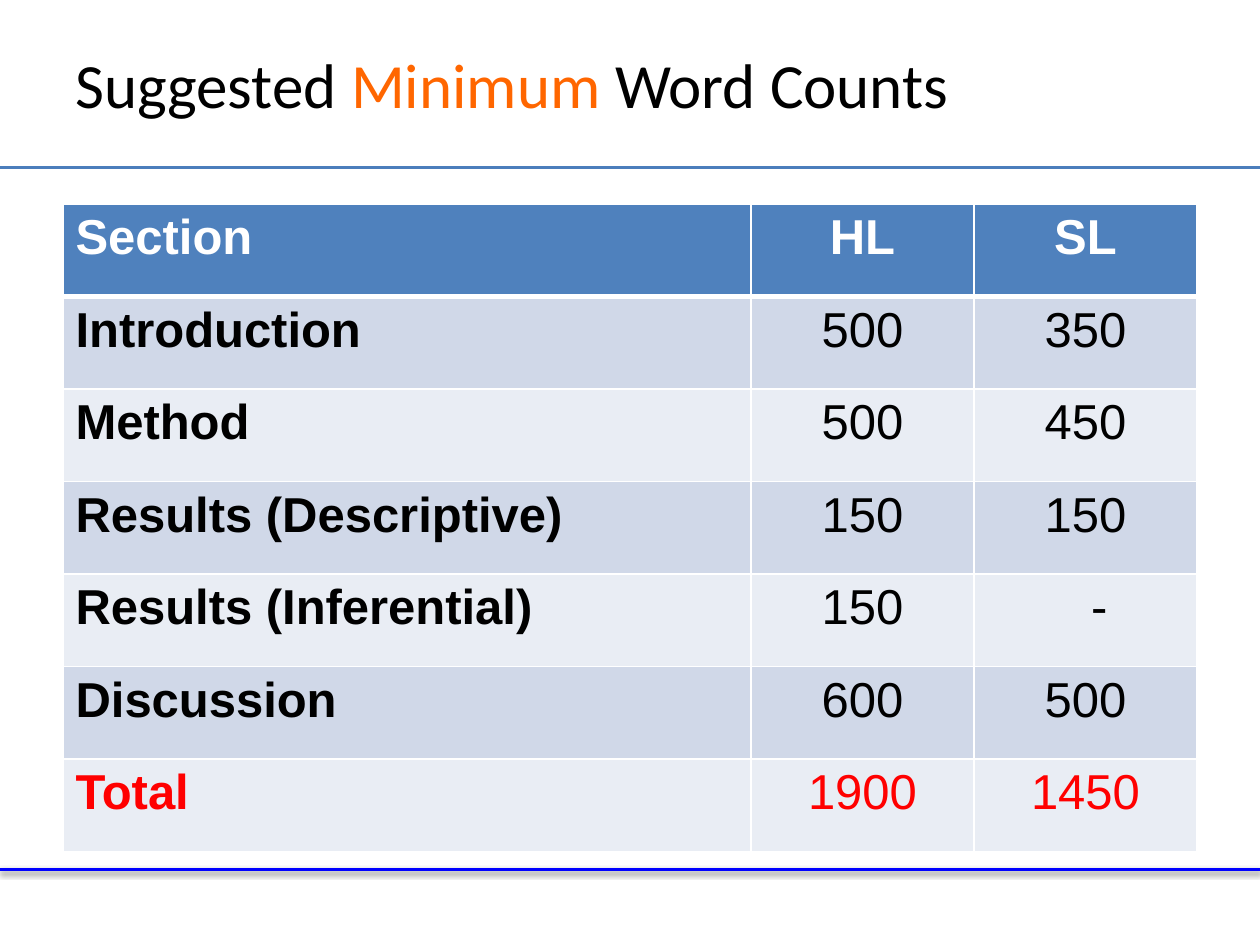
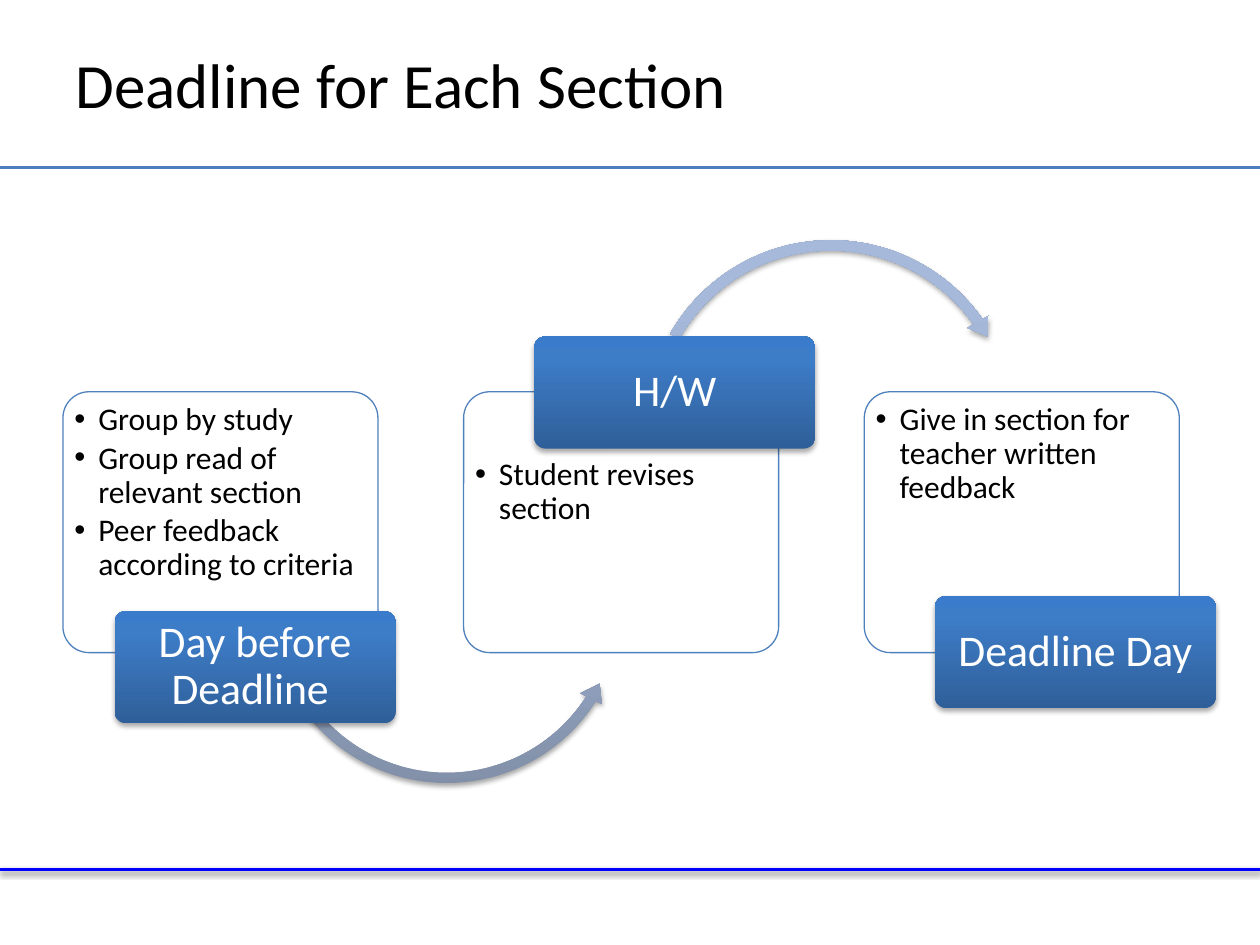
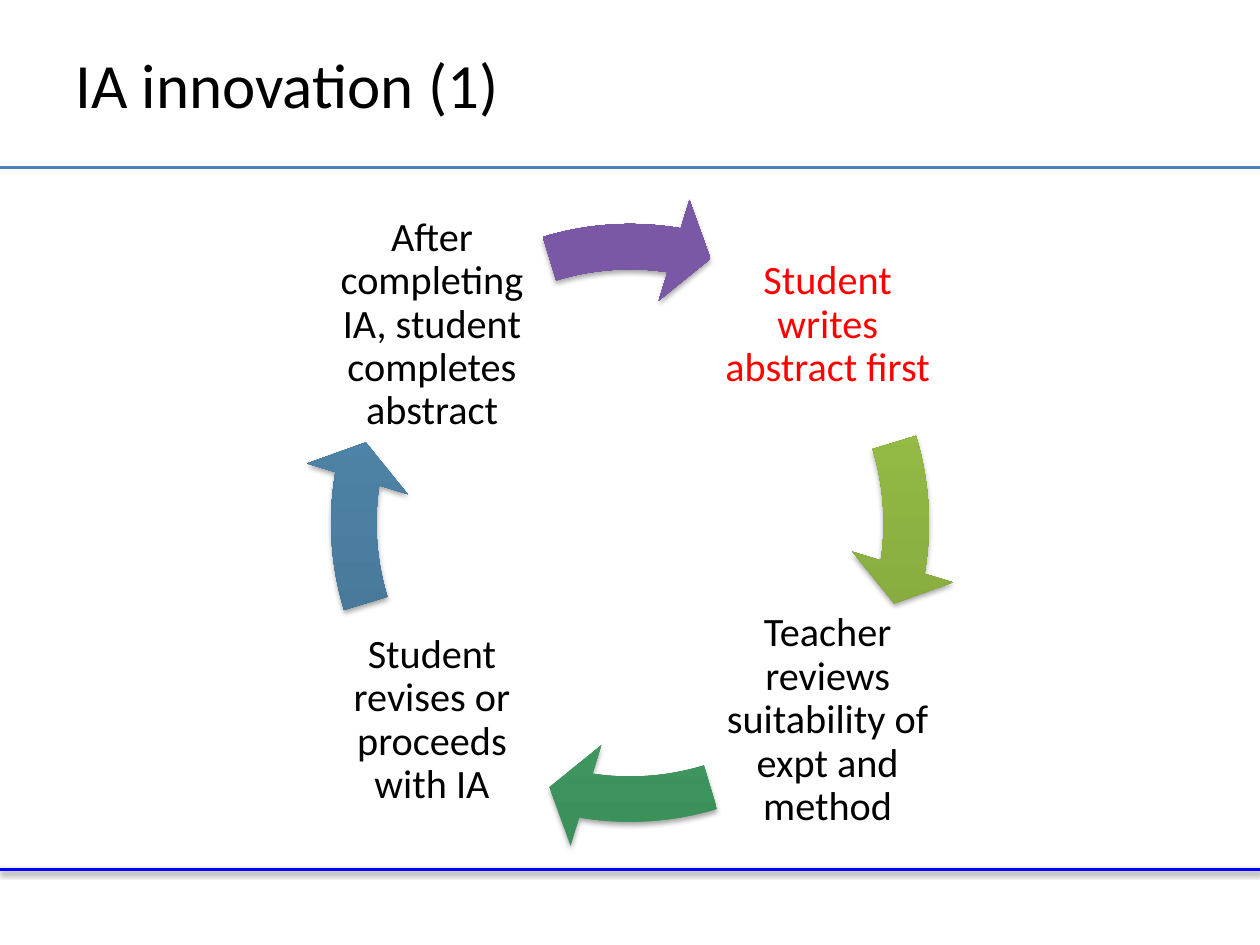
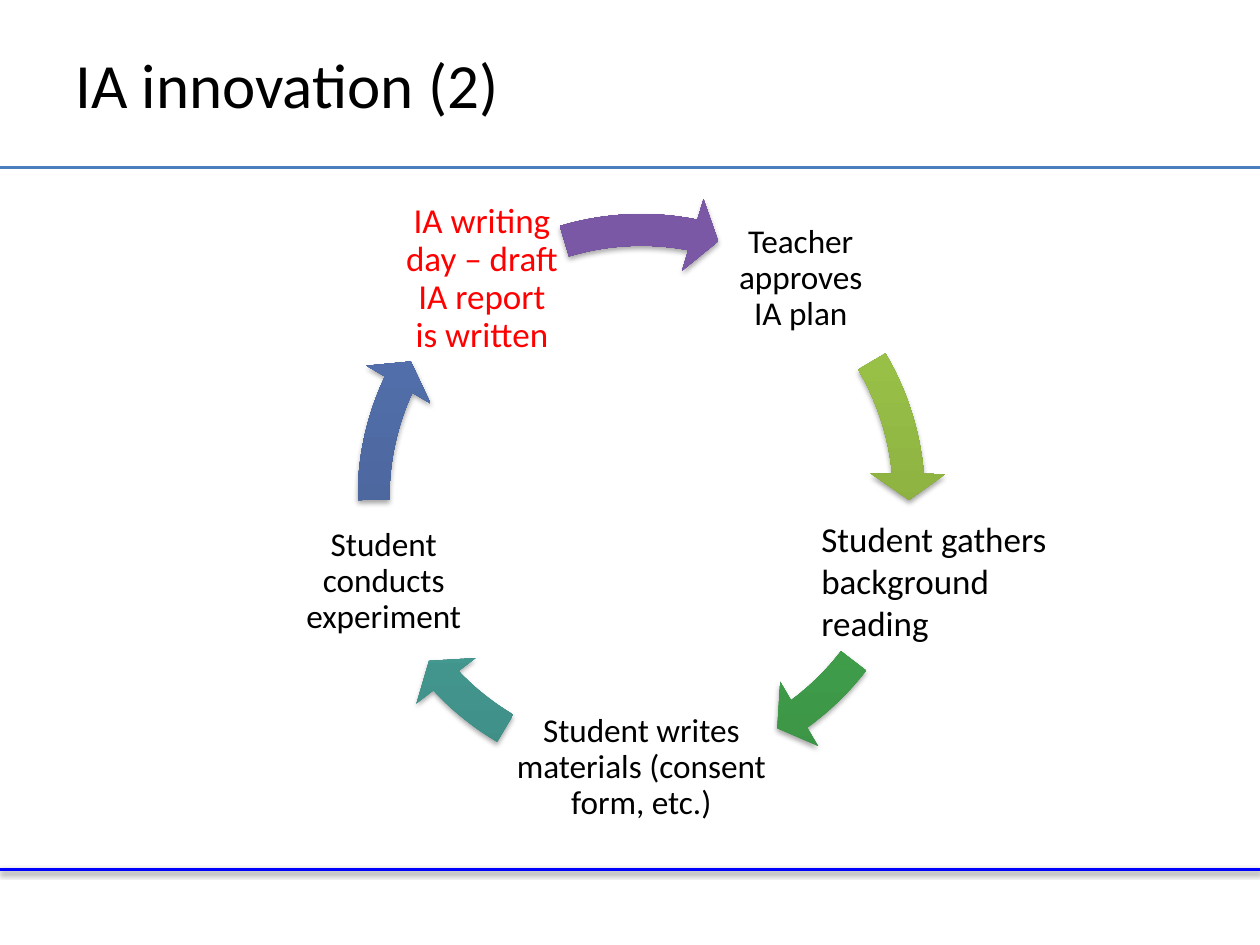
from copy import deepcopy

from lxml import etree
from pptx import Presentation
from pptx.dml.color import RGBColor
from pptx.enum.shapes import MSO_CONNECTOR, MSO_SHAPE
from pptx.enum.text import MSO_ANCHOR, PP_ALIGN
from pptx.oxml.ns import qn
from pptx.util import Inches, Pt

COLORS = {
    "black": "000000", "white": "FFFFFF", "red": "FF0000", "orange": "FF6600",
    "title_rule": "4B7EBC", "footer_rule": "0000FF", "accent": "4F81BD",
    "odd_row": "D0D8E8", "even_row": "E9EDF4",
}
# Gradient stops from bottom to top
GRADIENTS = {
    "label": ("2F5F99", "3D7CC7", "3A7CCB"),
    "pale": ("818FA8", "A7B9DA", "A7BADC"),
    "lime": ("779737", "9BC348", "9DC746"),
    "sea": ("3B8F5A", "4DBA75", "4BBD75"),
    "steel": ("3F6A88", "528AB0", "518BB3"),
    "purple": ("5F4480", "7B58A6", "7C57A8"),
    "green": ("3A9144", "4CBC58", "4ABF57"),
    "teal": ("3D8B83", "50B5AA", "4EB8AC"),
    "blue": ("405786", "5471AE", "5271B0"),
}
STOPS = (0, 0.8, 1)
FONT = "Calibri"


def rgb(name):
    return RGBColor.from_string(COLORS[name])


def sub(parent, tag, **attrs):
    el = etree.SubElement(parent, qn(tag))
    for key, value in attrs.items():
        el.set(key, str(value))
    return el


def set_shadow(sp, alpha=35, dist=1.8):
    """Give the shape a soft shadow below; alpha 0 means none."""
    spPr = sp._element.spPr
    for old in spPr.findall(qn("a:effectLst")):
        spPr.remove(old)
    effects = sub(spPr, "a:effectLst")
    if alpha:
        outer = sub(effects, "a:outerShdw", blurRad=Pt(3.1), dist=Pt(dist),
                    dir=5400000, rotWithShape=0)
        color = sub(outer, "a:srgbClr", val=COLORS["black"])
        sub(color, "a:alpha", val=alpha * 1000)


def set_gradient(sp, name):
    fill = sp.fill
    fill.gradient()
    fill.gradient_angle = 90
    stops = sp._element.spPr.find(".//" + qn("a:gsLst"))
    stops.append(deepcopy(stops[-1]))
    for stop, pos, color in zip(fill.gradient_stops, STOPS, GRADIENTS[name]):
        stop.position = pos
        stop.color.rgb = RGBColor.from_string(color)


def add_run(p, text, size, color="black", font=FONT, bold=False):
    r = p.add_run()
    r.text = text
    for key, value in {"size": Pt(size), "name": font, "bold": bold}.items():
        setattr(r.font, key, value)
    r.font.color.rgb = rgb(color)


def set_frame(tf, insets, anchor=MSO_ANCHOR.MIDDLE):
    """Insets are left, top, right, bottom in inches."""
    tf.word_wrap = True
    tf.vertical_anchor = anchor
    for side, inset in zip(("left", "top", "right", "bottom"), insets):
        setattr(tf, "margin_" + side, Inches(inset))


def write_centred(tf, text, size, color="black"):
    p = tf.paragraphs[0]
    p.alignment = PP_ALIGN.CENTER
    p.line_spacing = 0.9
    add_run(p, text, size, color)


def write_bullets(tf, items, size):
    for i, item in enumerate(items):
        p = tf.paragraphs[0] if i == 0 else tf.add_paragraph()
        p.level = 1
        p.alignment = PP_ALIGN.LEFT
        p.line_spacing = 0.9
        p.space_after = Pt(2.7)
        pPr = p._p.get_or_add_pPr()
        pPr.set("marL", str(Inches(0.19)))
        pPr.set("indent", str(Inches(-0.19)))
        sub(pPr, "a:buFont", typeface="Arial")
        sub(pPr, "a:buChar", char="•")
        add_run(p, item, size)


def add_rule(slide, y, color, width):
    line = slide.shapes.add_connector(
        MSO_CONNECTOR.STRAIGHT, 0, Inches(y), Inches(10), Inches(y))
    line.line.color.rgb = rgb(color)
    line.line.width = Pt(width)
    return line


def add_box(slide, x, y, w, h):
    return slide.shapes.add_textbox(Inches(x), Inches(y), Inches(w), Inches(h))


def add_slide(prs, *title_runs):
    """Add a slide with its rules and a title made of (text, color) runs."""
    slide = prs.slides.add_slide(prs.slide_layouts[6])
    set_shadow(add_rule(slide, 6.9, "footer_rule", 2), alpha=38, dist=1.6)
    set_shadow(add_rule(slide, 1.33, "title_rule", 1.75), alpha=0)
    tf = add_box(slide, 0.5, 0.08, 9, 1.17).text_frame
    set_frame(tf, (0.1, 0.05, 0.1, 0.05))
    for text, color in title_runs:
        add_run(tf.paragraphs[0], text, 36, color)
    return slide


def add_round_rect(slide, x, y, w, h):
    sp = slide.shapes.add_shape(MSO_SHAPE.ROUNDED_RECTANGLE, Inches(x),
                                Inches(y), Inches(w), Inches(h))
    sp.adjustments[0] = 0.1
    return sp


def add_card(slide, x, items, top_inset):
    sp = add_round_rect(slide, x, 3.11, 2.5, 2.07)
    sp.fill.solid()
    sp.fill.fore_color.rgb = rgb("white")
    sub(sp._element.spPr.find(".//" + qn("a:srgbClr")), "a:alpha", val=90000)
    sp.line.color.rgb = rgb("accent")
    sp.line.width = Pt(0.75)
    set_shadow(sp, alpha=0)
    set_frame(sp.text_frame, (0.03, top_inset, 0.03, 0.03), MSO_ANCHOR.TOP)
    write_bullets(sp.text_frame, items, 18)


def add_label(slide, x, y, text):
    sp = add_round_rect(slide, x, y, 2.23, 0.89)
    set_gradient(sp, "label")
    sp.line.fill.background()
    set_shadow(sp)
    set_frame(sp.text_frame, (0.04, 0.03, 0.04, 0.03))
    write_centred(sp.text_frame, text, 25, "white")


def add_arc_arrow(slide, box, angles, widths, gradient,
                  kind=MSO_SHAPE.CIRCULAR_ARROW):
    """Box is x, y, size; angles are head length, end and start in degrees;
    widths are band and head in percent of the size."""
    x, y, size = map(Inches, box)
    sp = slide.shapes.add_shape(kind, x, y, size, size)
    band, head = (w / 100 for w in widths)
    values = (band, *(a % 360 * 0.6 for a in angles), head)
    for i, value in enumerate(values):
        sp.adjustments[i] = value
    set_gradient(sp, gradient)
    sp.line.fill.background()
    set_shadow(sp)


def add_step(slide, x, y, w, h, text, size, color="black"):
    tf = add_box(slide, x, y, w, h).text_frame
    set_frame(tf, (0.03,) * 4)
    write_centred(tf, text, size, color)


def set_borders(cell, top, bottom):
    tcPr = cell._tc.get_or_add_tcPr()
    for side, width in zip("LRTB", (1, 1, top, bottom)):
        ln = sub(tcPr, "a:ln" + side, w=Pt(width))
        sub(sub(ln, "a:solidFill"), "a:srgbClr", val=COLORS["white"])


def add_count_table(slide, rows):
    frame = slide.shapes.add_table(len(rows), 3, Inches(0.5), Inches(1.62),
                                   Inches(9), Inches(5.14))
    table = frame.table
    for col, width in zip(table.columns, (5.46, 1.77, 1.77)):
        col.width = Inches(width)
    last = len(rows) - 1
    for i, row in enumerate(rows):
        fill = "accent" if i == 0 else "odd_row" if i % 2 else "even_row"
        color = {0: "white", last: "red"}.get(i, "black")
        for j, text in enumerate(row):
            cell = table.cell(i, j)
            set_borders(cell, top=3 if i == 1 else 1, bottom=3 if i == 0 else 1)
            cell.fill.solid()
            cell.fill.fore_color.rgb = rgb(fill)
            p = cell.text_frame.paragraphs[0]
            p.alignment = PP_ALIGN.CENTER if j else PP_ALIGN.LEFT
            add_run(p, text, 28, color, "Arial", bold=i == 0 or j == 0)
            if text == "-":
                cell.margin_left = Inches(0.32)


def build_word_counts(prs):
    slide = add_slide(prs, ("Suggested ", "black"), ("Minimum", "orange"),
                      (" Word Counts", "black"))
    add_count_table(slide, [
        ("Section", "HL", "SL"),
        ("Introduction", "500", "350"),
        ("Method", "500", "450"),
        ("Results (Descriptive)", "150", "150"),
        ("Results (Inferential)", "150", "-"),
        ("Discussion", "600", "500"),
        ("Total", "1900", "1450"),
    ])


def build_deadlines(prs):
    slide = add_slide(prs, ("Deadline for Each Section", "black"))
    add_card(slide, 0.5, ["Group by study", "Group read of relevant section",
                          "Peer feedback according to criteria"], 0.03)
    add_arc_arrow(slide, (2.09, 3.36, 2.91), (5.8, 32.53, 147.55), (2.8, 3.3),
                  "pale", MSO_SHAPE.LEFT_CIRCULAR_ARROW)
    add_label(slide, 0.91, 4.85, "Day before Deadline ")
    add_card(slide, 3.68, ["Student revises section"], 0.47)
    add_arc_arrow(slide, (5.07, 1.85, 3.05), (5.52, 324.89, 209.59),
                  (2.7, 3.2), "pale")
    add_label(slide, 4.24, 2.67, "H/W")
    add_card(slide, 6.86, ["Give in section for teacher written feedback"], 0.03)
    add_label(slide, 7.42, 4.73, "Deadline Day")


def build_abstract_cycle(prs):
    slide = add_slide(prs, ("IA innovation (1)", "black"))
    cx, cy, offset, side = 5, 4.15, 1.57, 1.84
    steps = [
        (1, -1, "Student writes abstract first", "red", "lime"),
        (1, 1, "Teacher reviews suitability of expt and method", "black", "sea"),
        (-1, 1, "Student revises or proceeds with IA", "black", "steel"),
        (-1, -1, "After completing IA, student completes abstract", "black",
         "purple"),
    ]
    for i, (dx, dy, text, color, gradient) in enumerate(steps):
        add_step(slide, cx + dx * offset - side / 2, cy + dy * offset - side / 2,
                 side, side, text, 23, color)
        add_arc_arrow(slide, (2.39, 1.54, 5.22),
                      (7.75, 9.19 + 90 * i, 343.06 + 90 * i), (6.9, 8), gradient)


def build_report_cycle(prs):
    slide = add_slide(prs, ("IA innovation (2)", "black"))
    for end, start, gradient in [
        (354.89, 329.44, "lime"),
        (53.87, 37.56, "green"),
        (136.85, 120.53, "teal"),
        (204.97, 179.51, "blue"),
        (281.1, 253.31, "purple"),
    ]:
        add_arc_arrow(slide, (2.67, 1.53, 4.84), (5.6, end, start), (5.2, 6.1),
                      gradient)
    for x, y, w, text, size, color in [
        (5.71, 1.57, 1.29, "Teacher approves IA plan", 19, "black"),
        (4, 5.45, 2.18, "Student writes materials (consent form, etc.)", 19,
         "black"),
        (2.4, 3.97, 1.29, "Student conducts experiment", 19, "black"),
        (3.18, 1.57, 1.29, "IA writing day – draft IA report is written", 20,
         "red"),
    ]:
        add_step(slide, x, y, w, 1.29, text, size, color)
    tf = add_box(slide, 6.42, 4.06, 2.05, 1.11).text_frame
    set_frame(tf, (0.1, 0.05, 0.1, 0.05), MSO_ANCHOR.TOP)
    add_run(tf.paragraphs[0], "Student gathers background reading", 20)


def main():
    prs = Presentation()
    prs.slide_width, prs.slide_height = Inches(10), Inches(7.5)
    build_word_counts(prs)
    build_deadlines(prs)
    build_abstract_cycle(prs)
    build_report_cycle(prs)
    prs.save("out.pptx")


if __name__ == "__main__":
    main()
